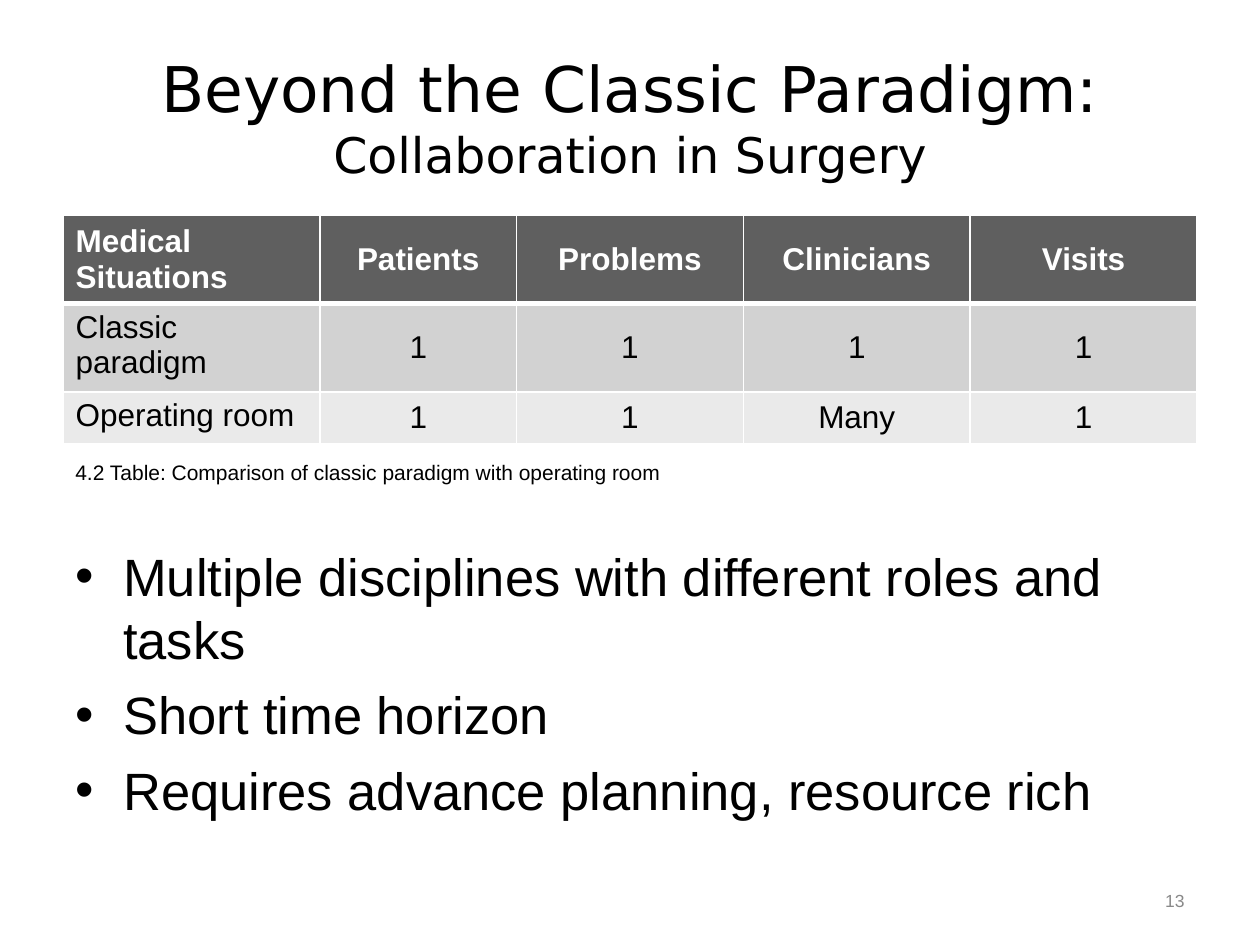
from dataclasses import dataclass

from lxml import etree
from pptx import Presentation
from pptx.dml.color import RGBColor
from pptx.enum.text import MSO_ANCHOR, PP_ALIGN
from pptx.oxml.ns import qn
from pptx.util import Inches, Pt

LEFT, CENTER, RIGHT = PP_ALIGN.LEFT, PP_ALIGN.CENTER, PP_ALIGN.RIGHT
TOP, MIDDLE = MSO_ANCHOR.TOP, MSO_ANCHOR.MIDDLE

BLACK = RGBColor(0x00, 0x00, 0x00)
WHITE = RGBColor(0xFF, 0xFF, 0xFF)
PAGE_NUMBER_GRAY = RGBColor(0x89, 0x89, 0x89)
ROW_FILLS = (
    RGBColor(0x5F, 0x5F, 0x5F),
    RGBColor(0xD2, 0xD2, 0xD2),
    RGBColor(0xEA, 0xEA, 0xEA),
)

MARGIN = 0.5
CONTENT_WIDTH = 9
ROW_HEIGHT = 0.41
COLUMN_WIDTHS = (2.04, 1.56, 1.8, 1.8, 1.8)
TABLE_ROWS = (
    ("Medical Situations", "Patients", "Problems", "Clinicians", "Visits"),
    ("Classic paradigm", "1", "1", "1", "1"),
    ("Operating room", "1", "1", "Many", "1"),
)
BULLET_INDENT = 0.38


@dataclass(frozen=True)
class Span:
    text: str
    size: float
    color: RGBColor = BLACK
    font: str = "Arial"
    bold: bool = False


@dataclass(frozen=True)
class TextBlock:
    left: float
    top: float
    width: float
    height: float
    paragraphs: tuple[tuple[Span, ...], ...]
    align: PP_ALIGN = LEFT
    anchor: MSO_ANCHOR = TOP
    space_before: float = 0
    bulleted: bool = False


TITLE = TextBlock(
    MARGIN, 0.3, CONTENT_WIDTH, 1.25,
    ((Span("Beyond the Classic Paradigm:", 36, font="DejaVu Sans"),
      Span("Collaboration in Surgery", 28, font="DejaVu Sans")),),
    align=CENTER, anchor=MIDDLE,
)
CAPTION = TextBlock(
    MARGIN, 3.6, CONTENT_WIDTH, 0.58,
    ((Span("4.2 Table: Comparison of classic paradigm with operating room", 12),),),
    space_before=2.8,
)
BULLETS = TextBlock(
    MARGIN, 4.27, CONTENT_WIDTH, 2.71,
    tuple((Span(text, 30),) for text in (
        "Multiple disciplines with different roles and tasks",
        "Short time horizon",
        "Requires advance planning, resource rich",
    )),
    space_before=7, bulleted=True,
)
PAGE_NUMBER = TextBlock(
    8.94, 6.85, 0.56, 0.6, ((Span("13", 10, PAGE_NUMBER_GRAY),),),
    align=RIGHT, anchor=MIDDLE,
)


def write_spans(para, spans: tuple[Span, ...]) -> None:
    """Write each span on its own line of one paragraph."""
    for index, span in enumerate(spans):
        if index:
            para.add_line_break()
        run = para.add_run()
        run.text = span.text
        run.font.color.rgb = span.color
        font_values = {"name": span.font, "size": Pt(span.size), "bold": span.bold}
        for name, value in font_values.items():
            setattr(run.font, name, value)


def add_bullet(para) -> None:
    properties = para._p.get_or_add_pPr()
    properties.set("marL", str(Inches(BULLET_INDENT)))
    properties.set("indent", str(-Inches(BULLET_INDENT)))
    etree.SubElement(properties, qn("a:buFont")).set("typeface", "Arial")
    etree.SubElement(properties, qn("a:buChar")).set("char", "•")


def add_text(page, block: TextBlock) -> None:
    box = page.shapes.add_textbox(
        Inches(block.left), Inches(block.top), Inches(block.width), Inches(block.height)
    )
    frame = box.text_frame
    frame.word_wrap = True
    frame.vertical_anchor = block.anchor
    for index, spans in enumerate(block.paragraphs):
        para = frame.add_paragraph() if index else frame.paragraphs[0]
        para.alignment = block.align
        para.space_before = Pt(block.space_before)
        if block.bulleted:
            add_bullet(para)
        write_spans(para, spans)


def set_borders(cell, bottom_width: float) -> None:
    """Draw white cell borders; they must precede the fill in the XML."""
    properties = cell._tc.get_or_add_tcPr()
    widths = {"a:lnL": 1, "a:lnR": 1, "a:lnT": 1, "a:lnB": bottom_width}
    for position, (tag, width) in enumerate(widths.items()):
        line = etree.Element(qn(tag), w=str(Pt(width)))
        fill = etree.SubElement(line, qn("a:solidFill"))
        etree.SubElement(fill, qn("a:srgbClr")).set("val", str(WHITE))
        properties.insert(position, line)


def add_comparison_table(page) -> None:
    row_count = len(TABLE_ROWS)
    table = page.shapes.add_table(
        row_count, len(COLUMN_WIDTHS), Inches(MARGIN), Inches(1.71),
        Inches(CONTENT_WIDTH), Inches(ROW_HEIGHT * row_count),
    ).table
    for column, width in zip(table.columns, COLUMN_WIDTHS):
        column.width = Inches(width)
    for row_index, texts in enumerate(TABLE_ROWS):
        is_header = row_index == 0
        table.rows[row_index].height = Inches(ROW_HEIGHT)
        for column_index, text in enumerate(texts):
            is_label = column_index == 0
            cell = table.cell(row_index, column_index)
            cell.fill.solid()
            cell.fill.fore_color.rgb = ROW_FILLS[row_index]
            cell.vertical_anchor = TOP if is_label and not is_header else MIDDLE
            # The rule under the header is shared with the first body row.
            set_borders(cell, 3 if is_header else 1)
            if row_index == 1:
                cell._tc.tcPr.find(qn("a:lnT")).set("w", str(Pt(3)))
            para = cell.text_frame.paragraphs[0]
            para.alignment = LEFT if is_label else CENTER
            color = WHITE if is_header else BLACK
            write_spans(para, (Span(text, 18, color, bold=is_header),))


def main() -> None:
    deck = Presentation()
    deck.slide_width, deck.slide_height = Inches(10), Inches(7.5)
    page = deck.slides.add_slide(deck.slide_layouts[6])
    add_text(page, TITLE)
    add_comparison_table(page)
    for block in (CAPTION, BULLETS, PAGE_NUMBER):
        add_text(page, block)
    deck.save("out.pptx")


if __name__ == "__main__":
    main()
